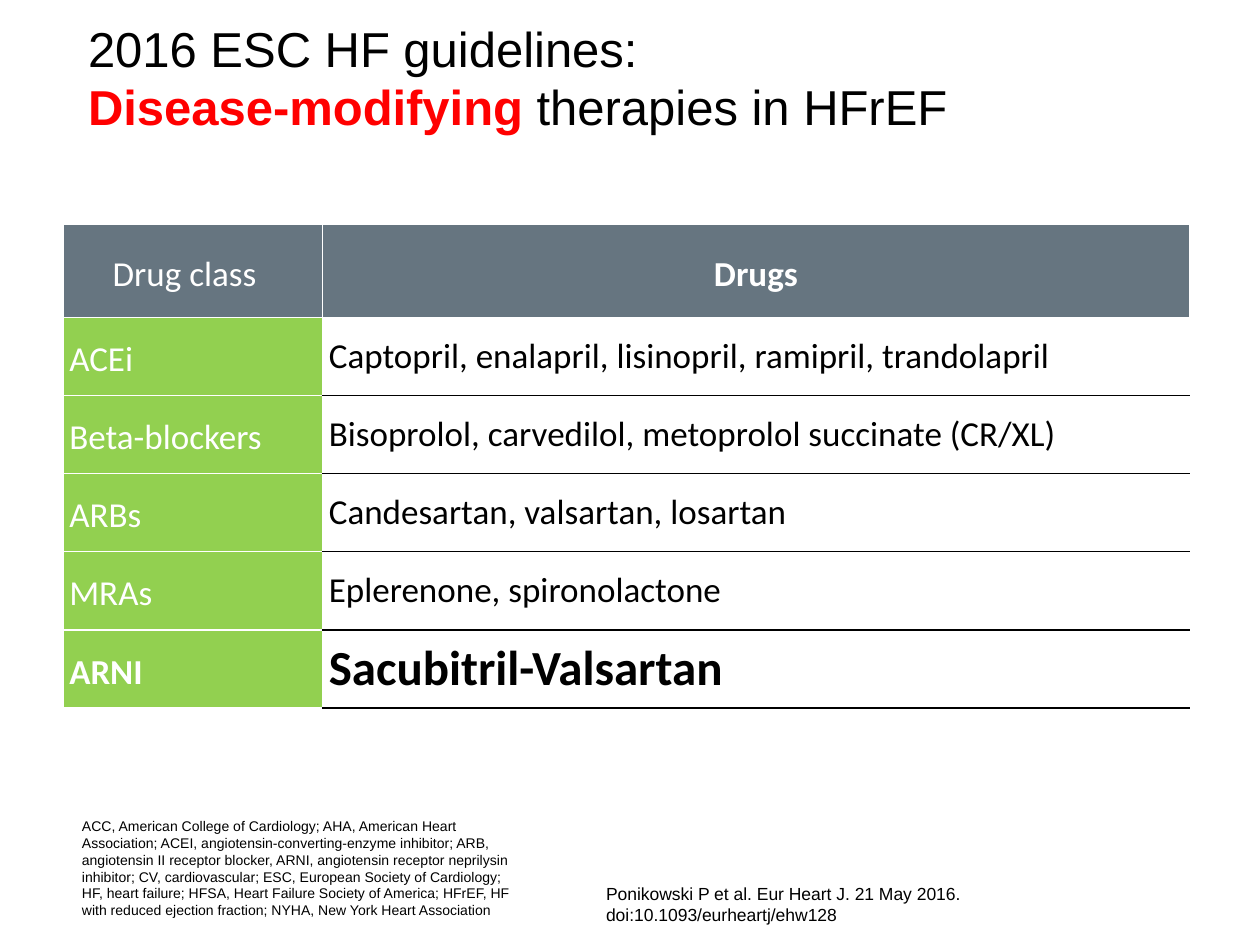
from dataclasses import dataclass

from lxml import etree
from pptx import Presentation
from pptx.dml.color import RGBColor
from pptx.enum.text import MSO_ANCHOR, PP_ALIGN
from pptx.oxml.ns import qn
from pptx.util import Inches, Pt

MIDDLE, TOP = MSO_ANCHOR.MIDDLE, MSO_ANCHOR.TOP
LEFT, CENTER = PP_ALIGN.LEFT, PP_ALIGN.CENTER
SLIDE_WIDTH, SLIDE_HEIGHT = Inches(10), Inches(7.5)


@dataclass(frozen=True)
class Theme:
    white: str = "FFFFFF"
    black: str = "000000"
    accent: str = "FF0000"
    header: str = "667580"
    drug_class: str = "92D050"
    text_font: str = "Arial"
    table_font: str = "Calibri"
    title_size: int = 28
    table_size: int = 20
    highlight_size: int = 28
    note_size: int = 8
    citation_size: int = 10
    border_width: int = 1


THEME = Theme()

COLUMN_WEIGHTS = (2.06, 6.88)
ROW_WEIGHTS = (0.74, 0.62, 0.62, 0.62, 0.62, 0.62)
THERAPIES = (
    ("ACEi", "Captopril, enalapril, lisinopril, ramipril, trandolapril"),
    ("Beta-blockers", "Bisoprolol, carvedilol, metoprolol succinate (CR/XL)"),
    ("ARBs", "Candesartan, valsartan, losartan"),
    ("MRAs", "Eplerenone, spironolactone"),
    ("ARNI", "Sacubitril-Valsartan"),
)
ABBREVIATIONS = (
    "ACC, American College of Cardiology; AHA, American Heart Association; "
    "ACEI, angiotensin-converting-enzyme inhibitor; ARB, angiotensin II receptor blocker, "
    "ARNI, angiotensin receptor neprilysin inhibitor; CV, cardiovascular; "
    "ESC, European Society of Cardiology; HF, heart failure; "
    "HFSA, Heart Failure Society of America; HFrEF, HF with reduced ejection fraction; "
    "NYHA, New York Heart Association"
)
CITATION = "Ponikowski P et al. Eur Heart J. 21 May 2016. doi:10.1093/eurheartj/ehw128"


def share_box(left, top, width, height):
    return (
        round(SLIDE_WIDTH * left / 100),
        round(SLIDE_HEIGHT * top / 100),
        round(SLIDE_WIDTH * width / 100),
        round(SLIDE_HEIGHT * height / 100),
    )


def set_values(target, values):
    for name, value in values.items():
        setattr(target, name, value)


def add_span(para, text, font, size, color, bold=False):
    span = para.add_run()
    span.text = text
    set_values(span.font, {"name": font, "size": Pt(size), "bold": bold})
    span.font.color.rgb = RGBColor.from_string(color)


def add_text_frame(page, box, anchor, insets):
    frame = page.shapes.add_textbox(*box).text_frame
    left, top, right, bottom = map(Inches, insets)
    set_values(frame, {
        "word_wrap": True, "vertical_anchor": anchor,
        "margin_left": left, "margin_top": top,
        "margin_right": right, "margin_bottom": bottom,
    })
    return frame


def add_title(page, box):
    frame = add_text_frame(page, box, MIDDLE, (0.1, 0.07, 0.1, 0.07))
    style = (THEME.text_font, THEME.title_size)
    add_span(frame.paragraphs[0], "2016 ESC HF guidelines:", *style, THEME.black)
    para = frame.add_paragraph()
    add_span(para, "Disease-modifying ", *style, THEME.accent, bold=True)
    add_span(para, "therapies in HFrEF", *style, THEME.black)


def add_footnote(page, box, text, size, indent=0):
    frame = add_text_frame(page, box, TOP, (indent, 0, 0, 0))
    add_span(frame.paragraphs[0], text, THEME.text_font, size, THEME.black)


def set_borders(cell, colors):
    properties = cell._tc.get_or_add_tcPr()
    for side in "LRTB":
        line = etree.SubElement(properties, qn(f"a:ln{side}"), w=str(Pt(THEME.border_width)))
        fill = etree.SubElement(line, qn("a:solidFill"))
        etree.SubElement(fill, qn("a:srgbClr"), val=colors.get(side, THEME.white))


def fill_cell(cell, text, color, fill=None, size=THEME.table_size, bold=False,
              align=LEFT, borders=None, right_inset=0.05, **spacing):
    set_borders(cell, borders or {})
    if fill:
        cell.fill.solid()
        cell.fill.fore_color.rgb = RGBColor.from_string(fill)
    else:
        cell.fill.background()
    set_values(cell, {
        "vertical_anchor": MIDDLE, "margin_left": Inches(0.05), "margin_top": 0,
        "margin_right": Inches(right_inset), "margin_bottom": 0,
    })
    para = cell.text_frame.paragraphs[0]
    set_values(para, {"alignment": align, **spacing})
    add_span(para, text, THEME.table_font, size, color, bold)


def add_therapy_table(page, box):
    table = page.shapes.add_table(len(ROW_WEIGHTS), len(COLUMN_WEIGHTS), *box).table
    set_values(table, {"first_row": False, "horz_banding": False})
    for column, weight in zip(table.columns, COLUMN_WEIGHTS):
        column.width = round(box[2] * weight / sum(COLUMN_WEIGHTS))
    for row, weight in zip(table.rows, ROW_WEIGHTS):
        row.height = round(box[3] * weight / sum(ROW_WEIGHTS))

    header = {"color": THEME.white, "fill": THEME.header, "align": CENTER, "line_spacing": 1.15}
    fill_cell(table.cell(0, 0), "Drug class", right_inset=0.18, **header)
    fill_cell(table.cell(0, 1), "Drugs", bold=True, **header)
    for index, (drug_class, drugs) in enumerate(THERAPIES, start=1):
        highlighted = index == len(THERAPIES)
        fill_cell(table.cell(index, 0), drug_class, THEME.white, THEME.drug_class,
                  bold=highlighted, line_spacing=1.15)
        fill_cell(table.cell(index, 1), drugs, THEME.black, bold=highlighted,
                  size=THEME.highlight_size if highlighted else THEME.table_size,
                  borders={"T": THEME.white if index == 1 else THEME.black, "B": THEME.black},
                  space_after=Pt(3))


def main():
    deck = Presentation()
    set_values(deck, {"slide_width": SLIDE_WIDTH, "slide_height": SLIDE_HEIGHT})
    page = deck.slides.add_slide(deck.slide_layouts[6])
    page.background.fill.solid()
    page.background.fill.fore_color.rgb = RGBColor.from_string(THEME.white)
    add_therapy_table(page, share_box(5, 23.73, 89.4, 51.2))
    add_title(page, share_box(6, 3.33, 92.9, 9.6))
    add_footnote(page, share_box(5.2, 86.53, 35.5, 3.07), ABBREVIATIONS, THEME.note_size, 0.13)
    add_footnote(page, share_box(48.1, 93.47, 33.1, 3.33), CITATION, THEME.citation_size)
    deck.save("out.pptx")


if __name__ == "__main__":
    main()
